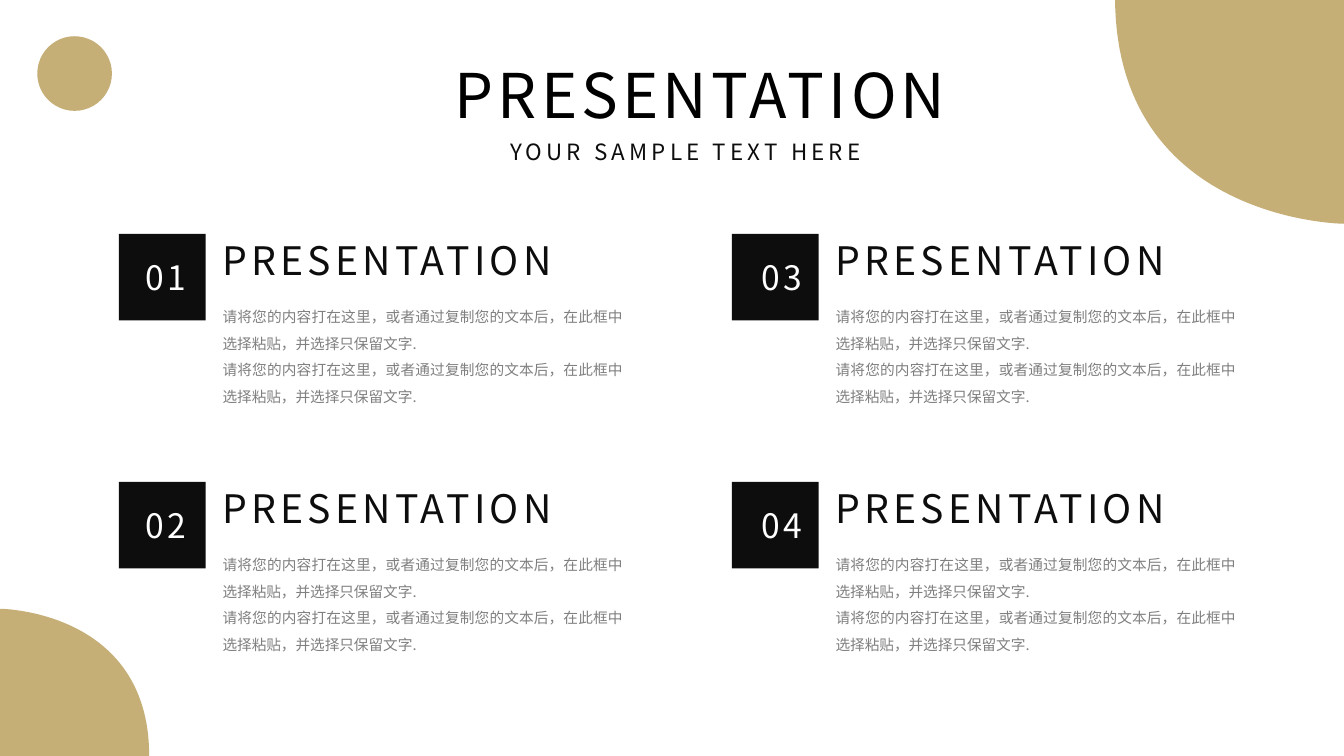
from dataclasses import dataclass

from lxml.etree import SubElement
from pptx import Presentation
from pptx.dml.color import RGBColor
from pptx.enum.shapes import MSO_SHAPE
from pptx.enum.text import MSO_AUTO_SIZE, PP_ALIGN
from pptx.oxml.ns import qn
from pptx.shapes.autoshape import Shape
from pptx.slide import Slide
from pptx.util import Inches, Pt

GOLD = RGBColor(0xC5, 0xAF, 0x76)
INK = RGBColor(0x0D, 0x0D, 0x0D)
BLACK = RGBColor(0x00, 0x00, 0x00)
GRAY = RGBColor(0x80, 0x80, 0x80)
WHITE = RGBColor(0xFF, 0xFF, 0xFF)

FONT = "Noto Sans CJK SC"
HEADING = "PRESENTATION"
BODY = "请将您的内容打在这里，或者通过复制您的文本后，在此框中选择粘贴，并选择只保留文字."
BADGE_SIZE = 0.86
ROW_TOPS = (2.32, 4.78)
CURVE_STEPS = 60


@dataclass(frozen=True)
class TextStyle:
    size: float
    color: RGBColor
    spacing: float = 3
    justified: bool = False


@dataclass(frozen=True)
class Column:
    badge_left: float
    number_left: float
    text_left: float


@dataclass(frozen=True)
class Corner:
    start: tuple[float, float]
    control: tuple[float, float]
    end: tuple[float, float]


TITLE_STYLE = TextStyle(44, BLACK)
SUBTITLE_STYLE = TextStyle(16, INK)
NUMBER_STYLE = TextStyle(24, WHITE)
HEADING_STYLE = TextStyle(28, INK)
BODY_STYLE = TextStyle(10.5, GRAY, spacing=0, justified=True)

COLUMNS = (Column(1.18, 1.34, 2.11), Column(7.26, 7.45, 8.19))
CORNERS = (
    Corner((13.33, 2.22), (11.06, 2.2), (11.06, -0.03)),
    Corner((0, 6.04), (1.48, 6.05), (1.48, 7.5)),
)


def paint(shape: Shape, color: RGBColor) -> None:
    shape.shadow.inherit = False
    shape.fill.solid()
    shape.fill.fore_color.rgb = color
    shape.line.fill.background()


def add_preset(slide: Slide, preset: MSO_SHAPE, left: float, top: float,
               side: float, color: RGBColor) -> None:
    shape = slide.shapes.add_shape(
        preset, Inches(left), Inches(top), Inches(side), Inches(side))
    paint(shape, color)


def add_text(slide: Slide, left: float, top: float, width: float, height: float,
             lines: list[str], style: TextStyle) -> None:
    box = slide.shapes.add_textbox(
        Inches(left), Inches(top), Inches(width), Inches(height))
    frame = box.text_frame
    frame.word_wrap = style.justified
    frame.auto_size = MSO_AUTO_SIZE.SHAPE_TO_FIT_TEXT
    frame.text = "\n".join(lines)
    for paragraph in frame.paragraphs:
        if style.justified:
            paragraph.alignment = PP_ALIGN.JUSTIFY
            paragraph.line_spacing = 1.5
        paragraph.font.size = Pt(style.size)
        paragraph.font.name = FONT
        paragraph.font.color.rgb = style.color
        properties = paragraph._p.pPr.find(qn("a:defRPr"))
        properties.set("spc", str(round(style.spacing * 100)))
        SubElement(properties, qn("a:ea")).set("typeface", FONT)


def curve_point(corner: Corner, t: float) -> tuple[int, int]:
    x, y = (
        start * ((1 - t) ** 3 + 3 * t * (1 - t) ** 2)
        + control * 3 * t ** 2 * (1 - t)
        + end * t ** 3
        for start, control, end in zip(corner.start, corner.control, corner.end)
    )
    return Inches(x), Inches(y)


def add_corner(slide: Slide, corner: Corner) -> None:
    first, *rest = [curve_point(corner, i / CURVE_STEPS) for i in range(CURVE_STEPS + 1)]
    tip = (Inches(corner.start[0]), Inches(corner.end[1]))
    outline = slide.shapes.build_freeform(*first)
    outline.add_line_segments([*rest, tip], close=True)
    paint(outline.convert_to_shape(), GOLD)


def add_item(slide: Slide, number: int, column: Column, top: float) -> None:
    add_preset(slide, MSO_SHAPE.RECTANGLE, column.badge_left, top, BADGE_SIZE, INK)
    add_text(slide, column.number_left, top + 0.18, 0.68, 0.5, [f"{number:02}"], NUMBER_STYLE)
    add_text(slide, column.text_left, top - 0.02, 3.6, 0.57, [HEADING], HEADING_STYLE)
    add_text(slide, column.text_left, top + 0.6, 4.17, 1.16, [BODY] * 2, BODY_STYLE)


def main() -> None:
    presentation = Presentation()
    presentation.slide_width = Inches(13.33)
    presentation.slide_height = Inches(7.5)
    slide = presentation.slides.add_slide(presentation.slide_layouts[6])

    cells = [(column, top) for column in COLUMNS for top in ROW_TOPS]
    for number, (column, top) in enumerate(cells, start=1):
        add_item(slide, number, column, top)

    add_text(slide, 4.96, 1.32, 3.89, 0.37, ["YOUR SAMPLE TEXT HERE"], SUBTITLE_STYLE)
    add_text(slide, 4.41, 0.52, 5.25, 0.84, [HEADING], TITLE_STYLE)
    for corner in CORNERS:
        add_corner(slide, corner)
    add_preset(slide, MSO_SHAPE.OVAL, 0.37, 0.36, 0.74, GOLD)

    presentation.save("out.pptx")


if __name__ == "__main__":
    main()
